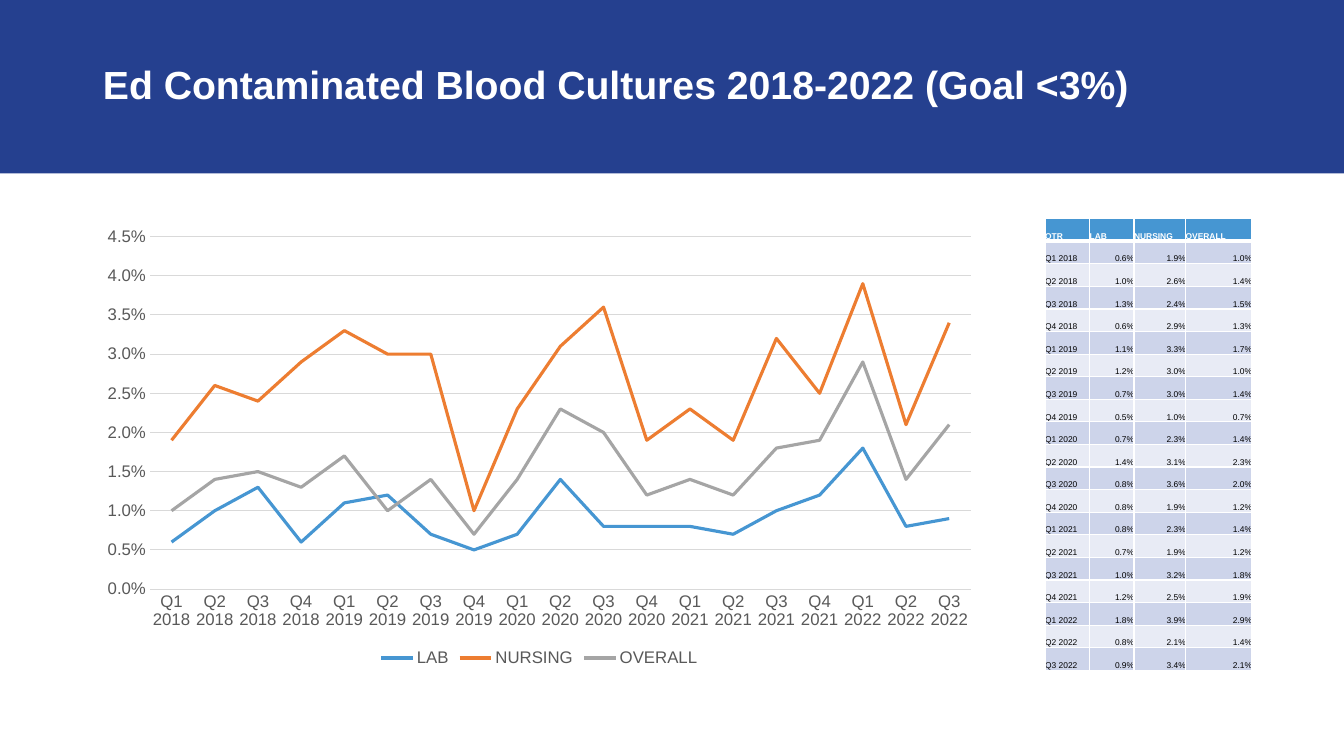
import pptx
import pptx.chart.data
import pptx.dml.color
import pptx.enum.chart
import pptx.enum.shapes
import pptx.enum.text
import pptx.oxml
import pptx.oxml.ns
import pptx.util

Cm, Pt = pptx.util.Cm, pptx.util.Pt
QUARTERS = [f"Q{q} {y}" for y in range(2018, 2023) for q in range(1, 5)][:19]
RATES = {
    "LAB": [0.6, 1.0, 1.3, 0.6, 1.1, 1.2, 0.7, 0.5, 0.7, 1.4,
            0.8, 0.8, 0.8, 0.7, 1.0, 1.2, 1.8, 0.8, 0.9],
    "NURSING": [1.9, 2.6, 2.4, 2.9, 3.3, 3.0, 3.0, 1.0, 2.3, 3.1,
                3.6, 1.9, 2.3, 1.9, 3.2, 2.5, 3.9, 2.1, 3.4],
    "OVERALL": [1.0, 1.4, 1.5, 1.3, 1.7, 1.0, 1.4, 0.7, 1.4, 2.3,
                2.0, 1.2, 1.4, 1.2, 1.8, 1.9, 2.9, 1.4, 2.1],
}
LINE_COLORS = ["4696D2", "ED7D31", "A5A5A5"]


def rgb(value):
    return pptx.dml.color.RGBColor.from_string(value)


def style_font(font, size, color, bold=False):
    font.name, font.size, font.bold = "Arial", Pt(size), bold
    font.color.rgb = rgb(color)


def write(tf, text, size=6, color="000000", bold=False, align="LEFT", anchor="BOTTOM", spacing=None):
    tf.vertical_anchor = pptx.enum.text.MSO_ANCHOR[anchor]
    p = tf.paragraphs[0]
    p.alignment = pptx.enum.text.PP_ALIGN[align]
    p.line_spacing = spacing
    r = p.add_run()
    r.text = text
    style_font(r.font, size, color, bold)


class Deck:
    """Builds slide elements in one house style."""

    def __init__(self):
        self.prs = pptx.Presentation()
        self.prs.slide_width, self.prs.slide_height = Cm(33.87), Cm(19.05)
        self.s = self.prs.slides.add_slide(self.prs.slide_layouts[5])

    def title(self, text, x, y, w, h):
        sp = self.s.shapes.title
        sp.left, sp.top, sp.width, sp.height = Cm(x), Cm(y), Cm(w), Cm(h)
        sp.text_frame.word_wrap = True
        write(sp.text_frame, text, 28, "FFFFFF", True, anchor="MIDDLE", spacing=0.9)

    def band(self, height, color):
        sp = self.s.shapes.add_shape(pptx.enum.shapes.MSO_SHAPE.RECTANGLE,
                                     0, 0, self.prs.slide_width, Cm(height))
        sp.shadow.inherit = False
        sp.fill.solid()
        sp.fill.fore_color.rgb = rgb(color)
        sp.line.fill.background()
        self.s.shapes.title._element.addprevious(sp._element)

    def line_chart(self, x, y, w, h):
        data = pptx.chart.data.CategoryChartData(number_format="0.0%")
        data.categories = QUARTERS
        for name, values in RATES.items():
            data.add_series(name, [round(v / 100, 3) for v in values])
        chart = self.s.shapes.add_chart(pptx.enum.chart.XL_CHART_TYPE.LINE,
                                        Cm(x), Cm(y), Cm(w), Cm(h), data).chart
        style_font(chart.font, 10, "000000")
        chart.has_title = False
        chart.has_legend = True
        chart.legend.position = pptx.enum.chart.XL_LEGEND_POSITION.BOTTOM
        chart.legend.include_in_layout = False
        style_font(chart.legend.font, 12, "595959")
        chart.plots[0].vary_by_categories = False
        for series, color in zip(chart.plots[0].series, LINE_COLORS):
            series.smooth = False
            series.marker.style = pptx.enum.chart.XL_MARKER_STYLE.NONE
            series.format.line.color.rgb = rgb(color)
            series.format.line.width = Pt(2.25)
        cat, val = chart.category_axis, chart.value_axis
        for axis in (cat, val):
            axis.major_tick_mark = axis.minor_tick_mark = pptx.enum.chart.XL_TICK_MARK.NONE
            style_font(axis.tick_labels.font, 12, "595959")
        val.minimum_scale, val.maximum_scale, val.major_unit = 0, 0.045, 0.005
        val.tick_labels.number_format = "0.0%"
        val.tick_labels.number_format_is_linked = False
        val.format.line.fill.background()
        val.has_major_gridlines = True
        for line in (cat.format.line, val.major_gridlines.format.line):
            line.color.rgb = rgb("D9D9D9")
            line.width = Pt(0.75)

    def borders(self, cell, widths):
        tc_pr = cell._tc.get_or_add_tcPr()
        for i, (side, width) in enumerate(zip("LRTB", widths)):
            tc_pr.insert(i, pptx.oxml.parse_xml(
                f'<a:ln{side} {pptx.oxml.ns.nsdecls("a")} w="{Pt(width)}"><a:solidFill>'
                f'<a:srgbClr val="FFFFFF"/></a:solidFill></a:ln{side}>'))

    def table(self, rows, x, y, widths, row_height):
        table = self.s.shapes.add_table(len(rows), len(widths), Cm(x), Cm(y), Cm(sum(widths)),
                                        Cm(row_height * len(rows))).table
        for column, width in zip(table.columns, widths):
            column.width = Cm(width)
        for i, row in enumerate(rows):
            table.rows[i].height = Cm(row_height)
            fill = "4696D2" if i == 0 else ("E8EBF5", "CDD4EA")[i % 2]
            for j, text in enumerate(row):
                cell = table.cell(i, j)
                cell.margin_left = cell.margin_right = cell.margin_top = cell.margin_bottom = 0
                cell.fill.solid()
                cell.fill.fore_color.rgb = rgb(fill)
                self.borders(cell, (1, 1, 3 if i == 1 else 1, 3 if i == 0 else 1))
                write(cell.text_frame, text, color="000000" if i else "FFFFFF", bold=i == 0,
                      align="RIGHT" if i and j else "LEFT")
                cell.vertical_anchor = pptx.enum.text.MSO_ANCHOR.BOTTOM


def main():
    deck = Deck()
    deck.title("Ed Contaminated Blood Cultures 2018-2022 (Goal <3%)", 2.34, 0.56, 28.73, 3.25)
    deck.band(4.37, "25408F")
    deck.line_chart(2.26, 5.51, 22.66, 11.4)
    rows = [["QTR", *RATES]]
    for quarter, *values in zip(QUARTERS, *RATES.values()):
        rows.append([quarter] + [f"{v:.1f}%" for v in values])
    deck.table(rows, 26.34, 5.51, [1.12, 1.12, 1.3, 1.67], 0.57)
    deck.prs.save("out.pptx")


if __name__ == "__main__":
    main()
